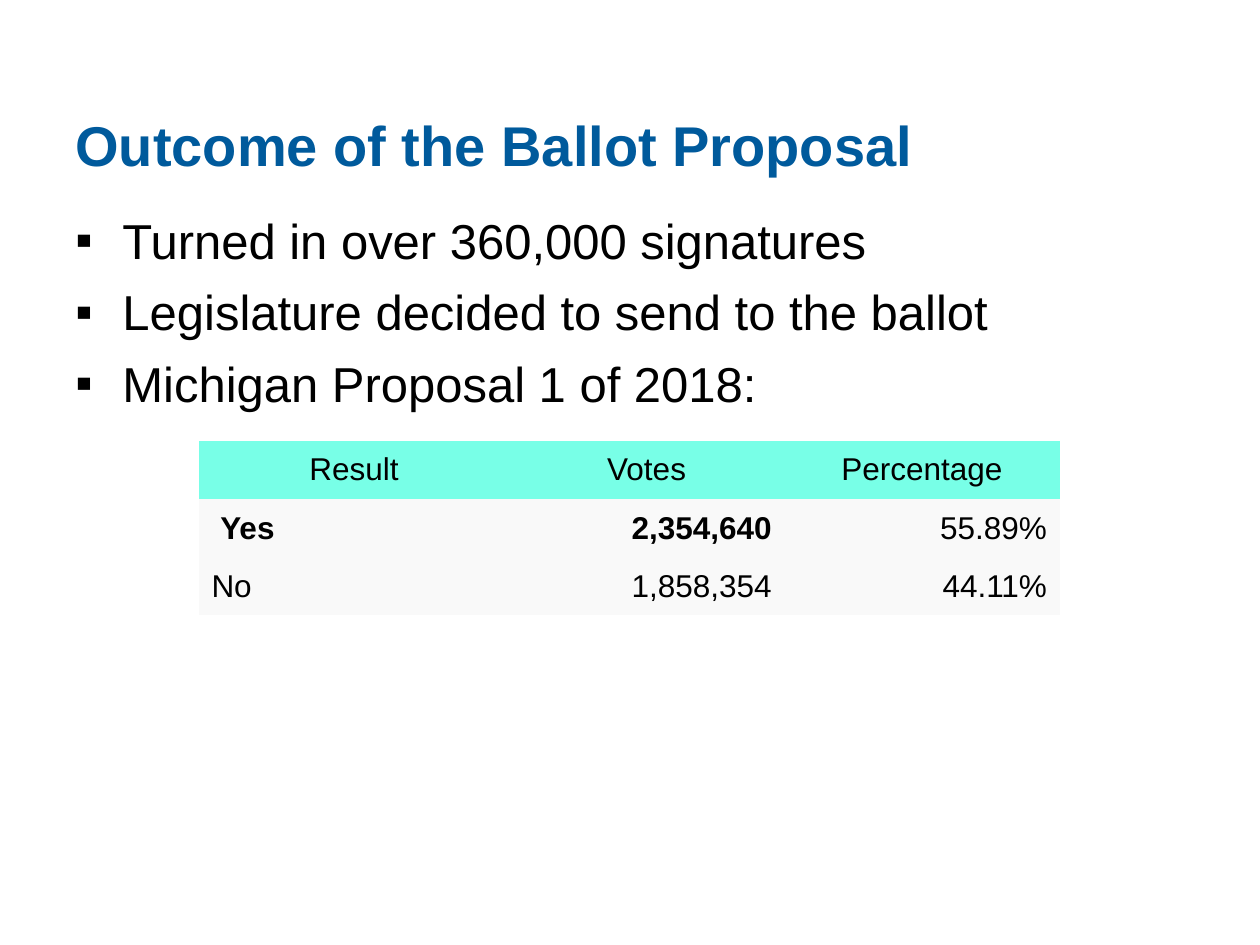
from lxml import etree
from pptx import Presentation
from pptx.dml.color import RGBColor
from pptx.enum import text
from pptx.oxml import ns
from pptx.util import Cm, Pt

BLUE = RGBColor(0x00, 0x5A, 0x9C)
BLACK = RGBColor(0x00, 0x00, 0x00)
AQUA = RGBColor(0x78, 0xFF, 0xE7)
PALE = RGBColor(0xF9, 0xF9, 0xF9)
LEFT, CENTER, RIGHT = text.PP_ALIGN.LEFT, text.PP_ALIGN.CENTER, text.PP_ALIGN.RIGHT


def write(paragraph, content, size=18, color=BLACK, bold=False, align=LEFT, bullet=None):
    if bullet:
        properties = paragraph._p.get_or_add_pPr()
        properties.set("marL", str(Cm(0.95)))
        properties.set("indent", str(-Cm(0.95)))
        etree.SubElement(properties, ns.qn("a:buFont"), typeface="Arial")
        etree.SubElement(properties, ns.qn("a:buChar"), char=bullet)
    paragraph.alignment = align
    run = paragraph.add_run()
    run.text = content
    run.font.name = "Arial"
    run.font.size = Pt(size)
    run.font.color.rgb = color
    run.font.bold = bold


presentation = Presentation()
presentation.slide_width = Cm(25.4)
presentation.slide_height = Cm(19.05)
slide = presentation.slides.add_slide(presentation.slide_layouts[6])

title = slide.shapes.add_textbox(Cm(1.27), Cm(1.22), Cm(22.86), Cm(3.23)).text_frame
title.word_wrap = True
title.vertical_anchor = text.MSO_ANCHOR.MIDDLE
title.margin_top = Cm(0.28)
write(title.paragraphs[0], "Outcome of the Ballot Proposal", size=32, color=BLUE, bold=True)

body = slide.shapes.add_textbox(Cm(1.27), Cm(4.01), Cm(22.86), Cm(11.84)).text_frame
body.word_wrap = True
body.margin_top = Cm(0.23)
points = [
    "Turned in over 360,000 signatures",
    "Legislature decided to send to the ballot",
    "Michigan Proposal 1 of 2018:",
]
for index, point in enumerate(points):
    paragraph = body.add_paragraph() if index else body.paragraphs[0]
    write(paragraph, point, size=28, bullet="▪")
    if index:
        paragraph.space_before = Pt(7.2)

rows = [
    ["Result", "Votes", "Percentage"],
    ["Yes", "2,354,640", "55.89%"],
    ["No", "1,858,354", "44.11%"],
]
bold_cells = {"Yes", "2,354,640"}
results = slide.shapes.add_table(3, 3, Cm(4.01), Cm(8.89), Cm(17.35), Cm(3.51)).table
for column, width in zip(results.columns, (6.25, 5.55, 5.55)):
    column.width = Cm(width)
for row_index, row in enumerate(rows):
    results.rows[row_index].height = Cm(1.17)
    for column_index, value in enumerate(row):
        cell = results.cell(row_index, column_index)
        cell.fill.solid()
        cell.fill.fore_color.rgb = PALE if row_index else AQUA
        cell.vertical_anchor = text.MSO_ANCHOR.MIDDLE
        align = CENTER if row_index == 0 else RIGHT if column_index else LEFT
        paragraph = cell.text_frame.paragraphs[0]
        if value == "Yes":
            write(paragraph, " ")
        write(paragraph, value, bold=value in bold_cells, align=align)

table_properties = results._tbl.tblPr
table_properties.find(ns.qn("a:tableStyleId")).text = "{2D5ABB26-0587-4C30-8999-92F81FD0307C}"
results.horz_banding = False
results.first_row = False

presentation.save("out.pptx")
